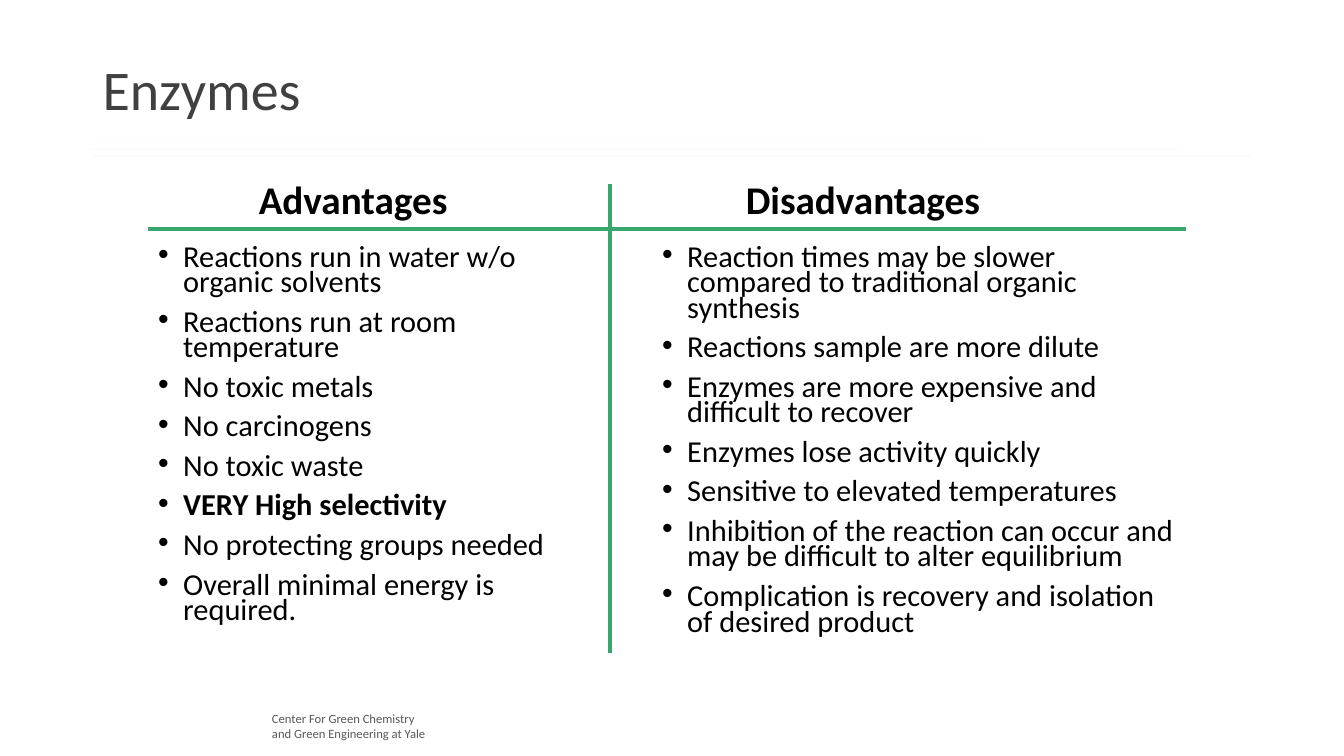
from lxml import etree
from pptx import Presentation
from pptx import util as u
from pptx.dml.color import RGBColor
from pptx.enum import shapes, text
from pptx.oxml import ns

GREEN = "37A76F"
BLACK = "000000"
BODY_TOP = 172.8
HEADING_TOP = 121.7

ADVANTAGES = [
    "Reactions run in water w/o organic solvents",
    "Reactions run at room temperature",
    "No toxic metals",
    "No carcinogens",
    "No toxic waste",
    "VERY High selectivity",
    "No protecting groups needed",
    "Overall minimal energy is required.",
]
DISADVANTAGES = [
    "Reaction times may be slower compared to traditional organic synthesis",
    "Reactions sample are more dilute",
    "Enzymes are more expensive and difficult to recover",
    "Enzymes lose activity quickly",
    "Sensitive to elevated temperatures",
    "Inhibition of the reaction can occur and may be difficult to alter equilibrium",
    "Complication is recovery and isolation of desired product",
]
EMPHASISED = "VERY High selectivity"

# Faint rules under the title: left, right, height on the slide, colour
TITLE_RULES = [
    (66.2, 703.4, 101.5, "4EB3CF"),
    (64.8, 843.1, 106.6, "44C1A3"),
    (65.5, 894.2, 111.6, GREEN),
]


def color(value):
    return RGBColor.from_string(value)


def add_text(slide, box, lines, size, ink=BLACK, bold=False, wrap=True):
    frame = slide.shapes.add_textbox(*map(u.Pt, box)).text_frame
    frame.word_wrap = wrap
    frame.text = "\n".join(lines)
    for paragraph in frame.paragraphs:
        for run in paragraph.runs:
            run.font.name = "Calibri"
            run.font.size = u.Pt(size)
            run.font.bold = bold
            run.font.color.rgb = color(ink)
    return frame


def add_bullets(slide, box, points):
    frame = add_text(slide, box, points, 21.7)
    for index, paragraph in enumerate(frame.paragraphs):
        properties = paragraph._p.get_or_add_pPr()
        properties.set("marL", str(u.Pt(18)))
        properties.set("indent", str(u.Pt(-18)))
        etree.SubElement(properties, ns.qn("a:buFont")).set("typeface", "Arial")
        etree.SubElement(properties, ns.qn("a:buChar")).set("char", "•")
        paragraph.line_spacing = 0.7
        paragraph.space_before = u.Pt(10 if index else 0)
        paragraph.runs[0].font.bold = paragraph.text == EMPHASISED


def add_rule(slide, start, end, ink, width, opacity=100):
    rule = slide.shapes.add_connector(
        shapes.MSO_CONNECTOR.STRAIGHT, *map(u.Pt, start + end))
    rule.line.color.rgb = color(ink)
    rule.line.width = u.Pt(width)
    properties = rule._element.spPr
    if opacity < 100:
        tint = properties.find(".//" + ns.qn("a:srgbClr"))
        etree.SubElement(tint, ns.qn("a:alpha")).set("val", str(opacity * 1000))
    etree.SubElement(properties, ns.qn("a:effectLst"))


def main():
    deck = Presentation()
    deck.slide_width, deck.slide_height = u.Pt(960), u.Pt(540)
    slide = deck.slides.add_slide(deck.slide_layouts[6])

    # Footer
    add_text(slide, (187.2, 504, 133.9, 28.8),
             ["Center For Green Chemistry", "and Green Engineering at Yale"],
             9, "595959")

    # Title and its rules
    for left, right, height, ink in TITLE_RULES:
        add_rule(slide, (left, height), (right, height), ink, 0.5, opacity=5)
    title = add_text(slide, (66.2, 13.7, 828, 104.4), ["Enzymes"], 40, "404040")
    title.vertical_anchor = text.MSO_ANCHOR.MIDDLE
    title.paragraphs[0].line_spacing = 0.9

    # Cross dividing the two columns
    add_rule(slide, (105.8, 163.4), (847.4, 163.4), GREEN, 3)
    add_rule(slide, (435.6, 131.8), (435.6, 466.6), GREEN, 3)

    # Columns: heading left and width, body left, width and height
    columns = [
        ("Advantages", 177.8, 151.2, 105.8, 317.5, 289.4, ADVANTAGES),
        ("Disadvantages", 525.6, 183.6, 465.8, 382.3, 319, DISADVANTAGES),
    ]
    for heading, head_left, head_width, left, width, height, points in columns:
        add_text(slide, (head_left, HEADING_TOP, head_width, 41), [heading],
                 28, bold=True, wrap=False)
        add_bullets(slide, (left, BODY_TOP, width, height), points)

    deck.save("out.pptx")


if __name__ == "__main__":
    main()
